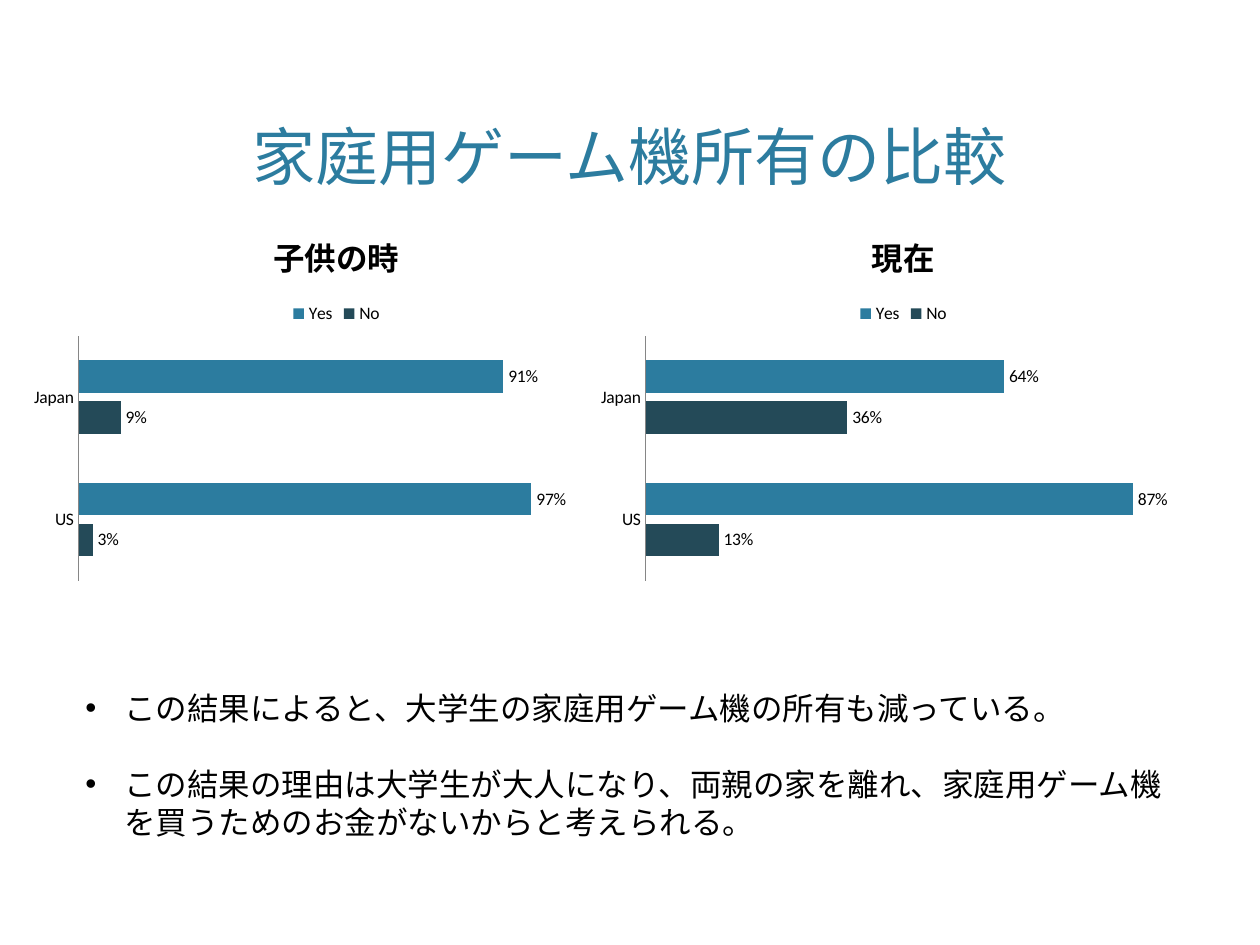
from lxml import etree
from pptx import Presentation
from pptx.chart.data import CategoryChartData
from pptx.dml.color import RGBColor
from pptx.enum.chart import XL_CHART_TYPE, XL_LABEL_POSITION, XL_LEGEND_POSITION, XL_TICK_MARK
from pptx.enum.text import MSO_ANCHOR, PP_ALIGN
from pptx.oxml.ns import qn
from pptx.util import Inches, Pt

BAR_CLUSTERED = XL_CHART_TYPE.BAR_CLUSTERED
OUTSIDE_END = XL_LABEL_POSITION.OUTSIDE_END
LEGEND_TOP = XL_LEGEND_POSITION.TOP
NO_TICKS = XL_TICK_MARK.NONE
BOTTOM = MSO_ANCHOR.BOTTOM
CENTER = PP_ALIGN.CENTER

BLACK = RGBColor(0x00, 0x00, 0x00)
GREY = RGBColor(0x86, 0x86, 0x86)
BLUE = RGBColor(0x2C, 0x7C, 0x9F)
NAVY = RGBColor(0x24, 0x4A, 0x58)

FONT = "Calibri"
TITLE_ONLY = 5
COUNTRIES = ["US", "Japan"]
ANSWER_COLORS = {"No": NAVY, "Yes": BLUE}
SURVEYS = [
    ("子供の時", {"No": (0.03, 0.09), "Yes": (0.97, 0.91)}),
    ("現在", {"No": (0.13, 0.36), "Yes": (0.87, 0.64)}),
]
FINDINGS = [
    "この結果によると、大学生の家庭用ゲーム機の所有も減っている。",
    "この結果の理由は大学生が大人になり、両親の家を離れ、家庭用ゲーム機を買うためのお金がないからと考えられる。",
]

# Chart row: equal columns
CHART_LEFT, CHART_TOP = 0.17, 1.67
CHART_PITCH = 4.5
CHART_WIDTH, CHART_HEIGHT = 5, 3


def set_font(font, size, color, bold=None):
    font.name = FONT
    font.size = Pt(size)
    font.bold = bold
    font.color.rgb = color


def box(left, top, width, height):
    return [Inches(length) for length in (left, top, width, height)]


def add_title(slide, text):
    title = slide.shapes.title
    title.left, title.top, title.width, title.height = box(0.6, 0.12, 8.8, 1.46)
    title.text_frame.text = text
    title.text_frame.vertical_anchor = BOTTOM
    heading = title.text_frame.paragraphs[0]
    heading.alignment = CENTER
    set_font(heading.font, 36, BLUE)


def style_axes(chart):
    countries, shares = chart.category_axis, chart.value_axis
    countries.major_tick_mark = countries.minor_tick_mark = NO_TICKS
    countries.format.line.color.rgb = GREY
    shares.visible = False
    shares.has_major_gridlines = False
    shares.tick_labels.number_format = "0%"
    shares.tick_labels.number_format_is_linked = False


def style_bars(plot):
    plot.gap_width = 150
    plot.overlap = -25
    plot.vary_by_categories = False
    for answer in plot.series:
        answer.format.fill.solid()
        answer.format.fill.fore_color.rgb = ANSWER_COLORS[answer.name]
        labels = answer.data_labels
        labels.show_value = True
        labels.number_format = "0%"
        labels.number_format_is_linked = False
        labels.position = OUTSIDE_END


def add_survey_chart(slide, column, period, answers):
    data = CategoryChartData(number_format="0%")
    data.categories = COUNTRIES
    for answer, shares in answers.items():
        data.add_series(answer, shares)
    left = CHART_LEFT + column * CHART_PITCH
    chart = slide.shapes.add_chart(
        BAR_CLUSTERED, *box(left, CHART_TOP, CHART_WIDTH, CHART_HEIGHT), data
    ).chart
    set_font(chart.font, 10, BLACK)

    chart.has_title = True
    chart.chart_title.include_in_layout = False
    chart.chart_title.text_frame.text = period
    set_font(chart.chart_title.text_frame.paragraphs[0].font, 18, BLACK, bold=True)

    chart.has_legend = True
    chart.legend.position = LEGEND_TOP
    chart.legend.include_in_layout = False

    style_axes(chart)
    style_bars(chart.plots[0])


def add_bullet(paragraph, indent):
    properties = paragraph._p.get_or_add_pPr()
    properties.set("marL", str(Inches(indent)))
    properties.set("indent", str(-Inches(indent)))
    etree.SubElement(properties, qn("a:buFont"), typeface="Arial")
    etree.SubElement(properties, qn("a:buChar"), char="•")


def add_findings(slide, findings):
    frame = slide.shapes.add_textbox(*box(0.58, 5.42, 8.83, 1.31)).text_frame
    frame.word_wrap = True
    for index, finding in enumerate(findings):
        paragraph = frame.add_paragraph() if index else frame.paragraphs[0]
        paragraph.text = finding
        set_font(paragraph.font, 18, BLACK)
        # One line of space between the findings
        paragraph.space_before = Pt(21.6 if index else 0)
        add_bullet(paragraph, 0.31)


def main():
    presentation = Presentation()
    presentation.slide_width, presentation.slide_height = Inches(10), Inches(7.5)
    slide = presentation.slides.add_slide(presentation.slide_layouts[TITLE_ONLY])

    add_title(slide, "家庭用ゲーム機所有の比較")
    for column, (period, answers) in enumerate(SURVEYS):
        add_survey_chart(slide, column, period, answers)
    add_findings(slide, FINDINGS)

    presentation.save("out.pptx")


if __name__ == "__main__":
    main()
